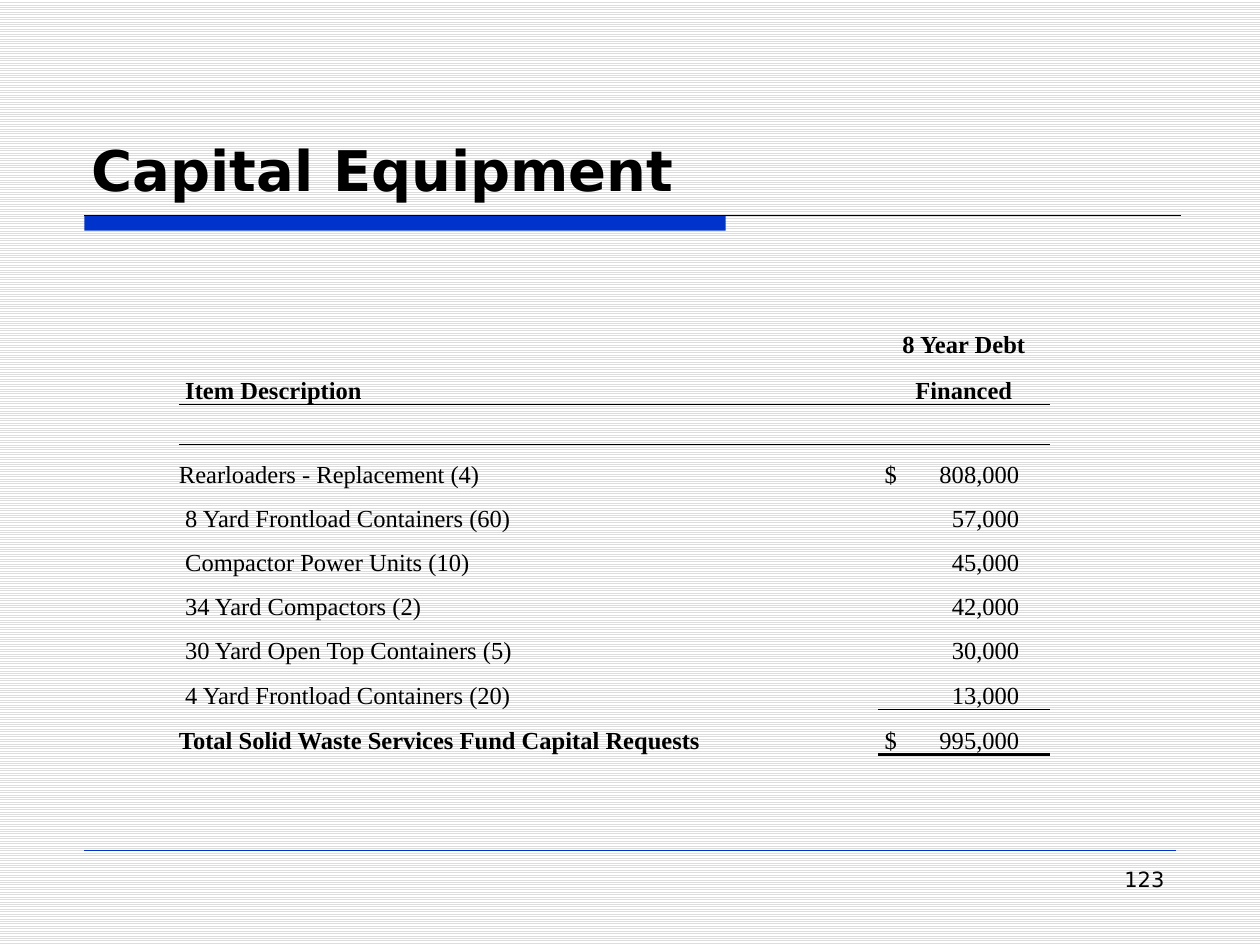
from lxml import etree
from pptx import Presentation
from pptx import util as u
from pptx.dml import color
from pptx.enum import dml, shapes, text
from pptx.oxml import ns

deck = Presentation()
deck.slide_width, deck.slide_height = u.Inches(10), u.Inches(7.5)
slide = deck.slides.add_slide(deck.slide_layouts[6])
UNIT = u.Inches(1)
BLACK, BLUE = "000000", "0033CC"
rgb = color.RGBColor.from_string


def write(paragraph, words, font, size, bold=False):
    paragraph.text = words
    for run in paragraph.runs:
        run.font.name, run.font.size, run.font.bold = font, u.Pt(size), bold
        run.font.color.rgb = rgb(BLACK)


def border(cell, side, points):
    edge = etree.SubElement(cell._tc.get_or_add_tcPr(), ns.qn(f"a:ln{side}"), w=str(u.Pt(points)))
    paint = etree.SubElement(edge, ns.qn("a:solidFill"))
    etree.SubElement(paint, ns.qn("a:srgbClr"), val=BLACK)


backdrop = slide.background.fill
backdrop.patterned()
backdrop.pattern = dml.MSO_PATTERN.LIGHT_HORIZONTAL
backdrop.fore_color.rgb, backdrop.back_color.rgb = rgb("DDDDDD"), rgb("FFFFFF")

left, rule_top, rule_bottom = 0.67 * UNIT, 1.71 * UNIT, 6.75 * UNIT
title_bar = slide.shapes.add_shape(
    shapes.MSO_SHAPE.RECTANGLE, u.Emu(int(left)), u.Emu(int(rule_top)), u.Inches(5.09), u.Inches(0.12))
title_bar.shadow.inherit = False
title_bar.fill.solid()
title_bar.fill.fore_color.rgb = rgb(BLUE)
title_bar.line.fill.background()

for y, right, ink, weight in ((rule_top, 9.37, BLACK, 0.75), (rule_bottom, 9.33, BLUE, 0.25)):
    rule = slide.shapes.add_connector(
        shapes.MSO_CONNECTOR.STRAIGHT, int(left), int(y), u.Inches(right), int(y))
    rule.line.color.rgb, rule.line.width = rgb(ink), u.Pt(weight)
    etree.SubElement(rule._element.spPr, ns.qn("a:effectLst"))

for words, place, size, bold, anchor, align in (
    ("Capital Equipment", (0.63, 0.33, 8.75, 1.33), 32, True, text.MSO_ANCHOR.BOTTOM, text.PP_ALIGN.LEFT),
    ("123", (7.17, 6.83, 2.17, 0.52), 12, False, text.MSO_ANCHOR.TOP, text.PP_ALIGN.RIGHT),
):
    frame = slide.shapes.add_textbox(*map(u.Inches, place)).text_frame
    frame.word_wrap, frame.vertical_anchor = True, anchor
    frame.paragraphs[0].alignment = align
    write(frame.paragraphs[0], words, "DejaVu Sans", size, bold)

requests = [
    ("", "8 Year Debt"),
    ("Item Description", "Financed"),
    ("", ""),
    ("Rearloaders - Replacement (4)", "$\t808,000"),
    ("8 Yard Frontload Containers (60)", "\t57,000"),
    ("Compactor Power Units (10)", "\t45,000"),
    ("34 Yard Compactors (2)", "\t42,000"),
    ("30 Yard Open Top Containers (5)", "\t30,000"),
    ("4 Yard Frontload Containers (20)", "\t13,000"),
    ("Total Solid Waste Services Fund Capital Requests", "$\t995,000"),
]
last = len(requests) - 1
equipment = slide.shapes.add_table(
    len(requests), 2, u.Inches(1.42), u.Inches(2.5), u.Inches(6.92), u.Inches(3.5)).table
equipment.first_row = equipment.horz_banding = False
equipment._tbl.tblPr.find(ns.qn("a:tableStyleId")).text = "{2D5ABB26-0587-4C30-8999-92F81FD0307C}"
for column, width in zip(equipment.columns, (5.55, 1.36)):
    column.width = u.Inches(width)
special_heights = {1: 0.36, 2: 0.32, last: 0.36}
rules_below = {(1, 0): 1, (1, 1): 1, (last - 1, 1): 0.5, (last, 1): 2}

for r, request in enumerate(requests):
    equipment.rows[r].height = u.Inches(special_heights.get(r, 0.35))
    for c, words in enumerate(request):
        cell = equipment.cell(r, c)
        cell.margin_left = cell.margin_right = cell.margin_top = cell.margin_bottom = 0
        cell.vertical_anchor = text.MSO_ANCHOR.BOTTOM
        if (r, c) in rules_below:
            border(cell, "B", rules_below[r, c])
        if (r - 1, c) in rules_below:
            border(cell, "T", rules_below[r - 1, c])
        cell.fill.background()
        entry = cell.text_frame.paragraphs[0]
        write(entry, words, "Times New Roman", 14, r < 2 or (r == last and c == 0))
        if c == 1 and r < 2:
            entry.alignment = text.PP_ALIGN.CENTER
        elif c == 1 or r not in (3, last):
            cell.margin_left = u.Inches(0.05)
        if c == 1 and r > 2:
            stops = etree.SubElement(entry._p.get_or_add_pPr(), ns.qn("a:tabLst"))
            etree.SubElement(stops, ns.qn("a:tab"), pos=str(u.Inches(1.07)), algn="r")

deck.save("out.pptx")
